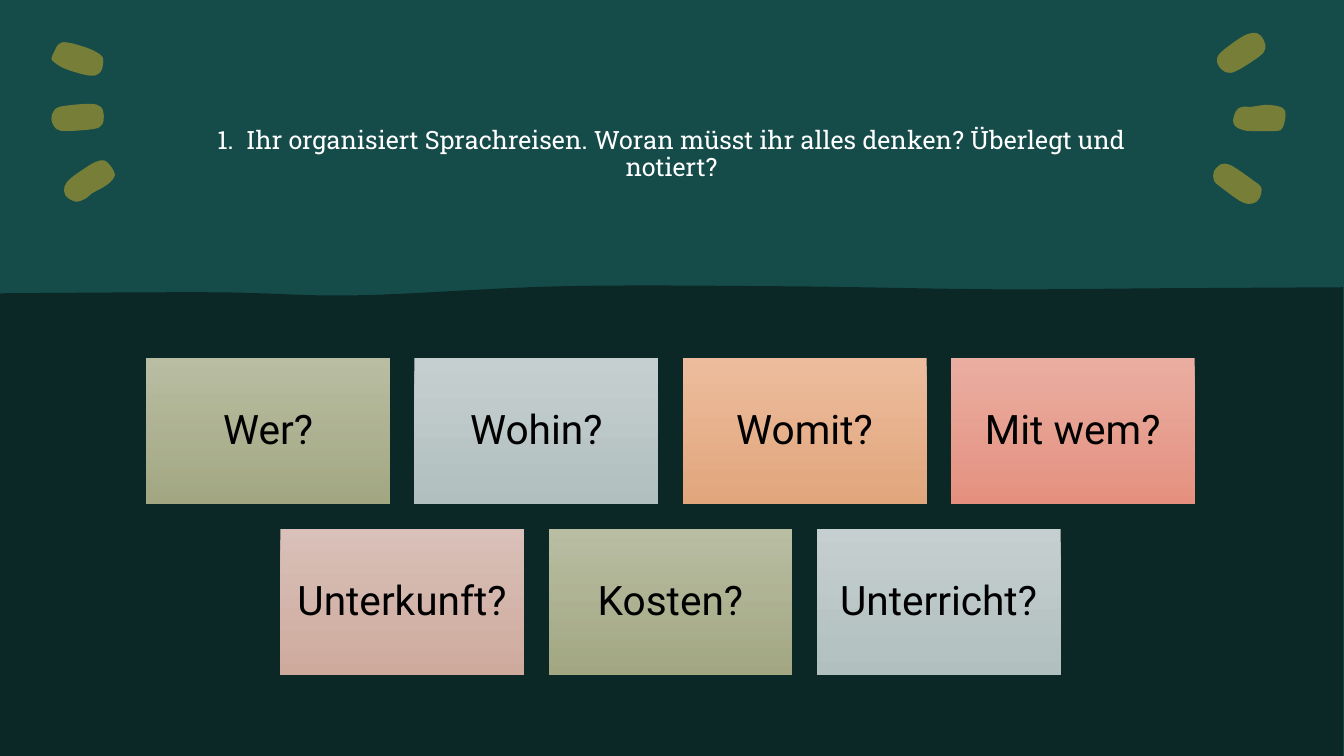
from dataclasses import dataclass

from lxml import etree
from pptx import Presentation
from pptx.dml.color import RGBColor
from pptx.enum.shapes import MSO_SHAPE
from pptx.enum.text import MSO_ANCHOR, PP_ALIGN
from pptx.oxml.ns import qn
from pptx.util import Inches, Pt

RECTANGLE = MSO_SHAPE.RECTANGLE
CENTER = PP_ALIGN.CENTER
MIDDLE = MSO_ANCHOR.MIDDLE


@dataclass(frozen=True)
class Theme:
    """Colours, fonts and type sizes of the slide."""
    dark: str = "0B2827"
    teal: str = "154C4A"
    olive: str = "767E37"
    white: str = "FFFFFF"
    black: str = "000000"
    title_font: str = "Roboto Slab"
    card_font: str = "Roboto"
    title_size: float = 18
    card_size: float = 29
    card_gradients: tuple = (
        ("B9BDA2", "A2A782"),
        ("C6CFCF", "B1BFBF"),
        ("EDBC9D", "E1A67C"),
        ("E9AEA1", "E5907F"),
        ("D9C0B8", "CEAA9D"),
    )


THEME = Theme()
SLIDE_WIDTH, SLIDE_HEIGHT = 13.33, 7.5
TITLE = "1.  Ihr organisiert Sprachreisen. Woran müsst ihr alles denken? Überlegt und notiert?"
CARD_ROWS = (("Wer?", "Wohin?", "Womit?", "Mit wem?"), ("Unterkunft?", "Kosten?", "Unterricht?"))
WAVE = ((0, 2.91), (2.13, 2.9), (3.53, 2.93), (5.57, 2.84),
        (7.76, 2.84), (9.87, 2.87), (11.53, 2.86), (13.32, 2.85))
LEFT_DASHES = (
    ((0.03, 0.09), (0.07, 0.02), (0.15, 0), (0.34, 0.05), (0.45, 0.1), (0.51, 0.15),
     (0.51, 0.23), (0.49, 0.29), (0.43, 0.33), (0.32, 0.32), (0.13, 0.26), (0.03, 0.2), (0, 0.16)),
    ((0.14, 0.63), (0.38, 0.61), (0.49, 0.64), (0.52, 0.73), (0.5, 0.82),
     (0.42, 0.86), (0.16, 0.88), (0.05, 0.86), (0, 0.76), (0.04, 0.66)),
    ((0.58, 1.39), (0.51, 1.44), (0.4, 1.5), (0.34, 1.55), (0.24, 1.58), (0.14, 1.52),
     (0.13, 1.43), (0.19, 1.35), (0.33, 1.25), (0.43, 1.19), (0.52, 1.17),
     (0.59, 1.23), (0.63, 1.32)),
)
RIGHT_DASHES = (
    ((0.09, 0.18), (0.22, 0.08), (0.34, 0.01), (0.44, 0), (0.5, 0.06), (0.52, 0.15),
     (0.46, 0.23), (0.24, 0.37), (0.14, 0.39), (0.06, 0.33), (0.04, 0.25)),
    ((0.37, 0.97), (0.3, 0.96), (0.23, 0.93), (0.2, 0.87), (0.23, 0.77), (0.29, 0.73),
     (0.38, 0.73), (0.54, 0.71), (0.69, 0.74), (0.72, 0.81), (0.69, 0.94), (0.62, 0.97)),
    ((0.01, 1.46), (0.01, 1.37), (0.08, 1.3), (0.15, 1.3), (0.23, 1.34), (0.4, 1.46),
     (0.48, 1.53), (0.46, 1.64), (0.39, 1.69), (0.28, 1.67), (0.07, 1.52)),
)


def rgb(value):
    """Turn a hexadecimal colour into an RGBColor."""
    return RGBColor.from_string(value)


def finish(shape, color=None):
    """Remove shadow and line, and apply a solid fill if one is given."""
    shape.shadow.inherit = False
    shape.line.fill.background()
    if color:
        shape.fill.solid()
        shape.fill.fore_color.rgb = rgb(color)


def smooth_handles(points, closed):
    """Return the two control points of each segment of a smooth curve."""
    count = len(points)

    def pick(index):
        return points[index % count if closed else min(max(index, 0), count - 1)]

    handles = []
    for index in range(count if closed else count - 1):
        before, start, end, after = [pick(index + offset) for offset in (-1, 0, 1, 2)]
        handles.append((
            [s + (e - b) / 6 for b, s, e in zip(before, start, end)],
            [e - (a - s) / 6 for s, e, a in zip(start, end, after)],
        ))
    return handles


def add_outline(slide, curve, color, left=0, top=0, corners=()):
    """Draw a filled curve, closed on itself or through straight corners."""
    closed = not corners
    points = [(Inches(left + x), Inches(top + y)) for x, y in curve]
    straight = [(Inches(left + x), Inches(top + y)) for x, y in corners]
    builder = slide.shapes.build_freeform(*points[0])
    builder.add_line_segments(points[1:] + (straight or points[:1]), close=True)
    shape = builder.convert_to_shape()
    finish(shape, color)
    segments = list(shape.element.iter(qn("a:lnTo")))
    for segment, handles in zip(segments, smooth_handles(points, closed)):
        segment.tag = qn("a:cubicBezTo")
        for position, (x, y) in enumerate(handles):
            point = etree.Element(qn("a:pt"), x=str(round(x - shape.left)),
                                  y=str(round(y - shape.top)))
            segment.insert(position, point)


def write_text(shape, text, *, font, size, color, margin=0.0, spacing=0.9):
    """Put centred, formatted text into a shape."""
    frame = shape.text_frame
    frame.word_wrap = True
    frame.vertical_anchor = MIDDLE
    frame.margin_left = frame.margin_right = Inches(margin)
    frame.margin_top = frame.margin_bottom = Inches(margin)
    paragraph = frame.paragraphs[0]
    paragraph.alignment = CENTER
    paragraph.line_spacing = spacing
    run = paragraph.add_run()
    run.text = text
    run.font.name = font
    run.font.size = Pt(size)
    run.font.color.rgb = rgb(color)


def add_header(slide, left, top, width, height):
    """Draw the teal area with its dashes, wavy edge and title."""
    box = [Inches(value) for value in (left, top, width, height)]
    finish(slide.shapes.add_shape(RECTANGLE, *box), THEME.teal)
    for dashes, x, y in ((LEFT_DASHES, 0.51, 0.42), (RIGHT_DASHES, 12.03, 0.33)):
        for dash in dashes:
            add_outline(slide, dash, THEME.olive, left + x, top + y)
    corners = ((WAVE[-1][0], height), (0, height))
    add_outline(slide, WAVE, THEME.dark, left, top, corners)
    title = slide.shapes.add_textbox(
        Inches(left + 1.83), Inches(top + 1.24), Inches(9.66), Inches(0.6))
    write_text(title, TITLE, font=THEME.title_font, size=THEME.title_size, color=THEME.white)


def add_card(slide, text, gradient, left, top, width, height):
    """Draw one question card."""
    box = [Inches(value) for value in (left, top, width, height)]
    card = slide.shapes.add_shape(RECTANGLE, *box)
    finish(card)
    card.fill.gradient()
    card.fill.gradient_angle = 270
    for stop, color in zip(card.fill.gradient_stops, gradient):
        stop.color.rgb = rgb(color)
    write_text(card, text, font=THEME.card_font, size=THEME.card_size,
               color=THEME.black, margin=0.12)


def add_cards(slide, left, top, width, height, gap=0.24):
    """Lay out the question cards in centred rows."""
    columns = max(len(row) for row in CARD_ROWS)
    card_width = (width - (columns - 1) * gap) / columns
    card_height = (height - (len(CARD_ROWS) - 1) * gap) / len(CARD_ROWS)
    number = 0
    for row_index, row in enumerate(CARD_ROWS):
        row_left = left + (columns - len(row)) * (card_width + gap) / 2
        for column, text in enumerate(row):
            gradient = THEME.card_gradients[number % len(THEME.card_gradients)]
            add_card(slide, text, gradient, row_left + column * (card_width + gap),
                     top + row_index * (card_height + gap), card_width, card_height)
            number += 1


def main():
    """Build and save the presentation."""
    presentation = Presentation()
    presentation.slide_width = Inches(SLIDE_WIDTH)
    presentation.slide_height = Inches(SLIDE_HEIGHT)
    slide = presentation.slides.add_slide(presentation.slide_layouts[6])
    slide.background.fill.solid()
    slide.background.fill.fore_color.rgb = rgb(THEME.dark)
    add_header(slide, 0, 0, SLIDE_WIDTH, SLIDE_HEIGHT)
    add_cards(slide, 1.45, 3.55, 10.4, 3.15)
    presentation.save("out.pptx")


if __name__ == "__main__":
    main()
